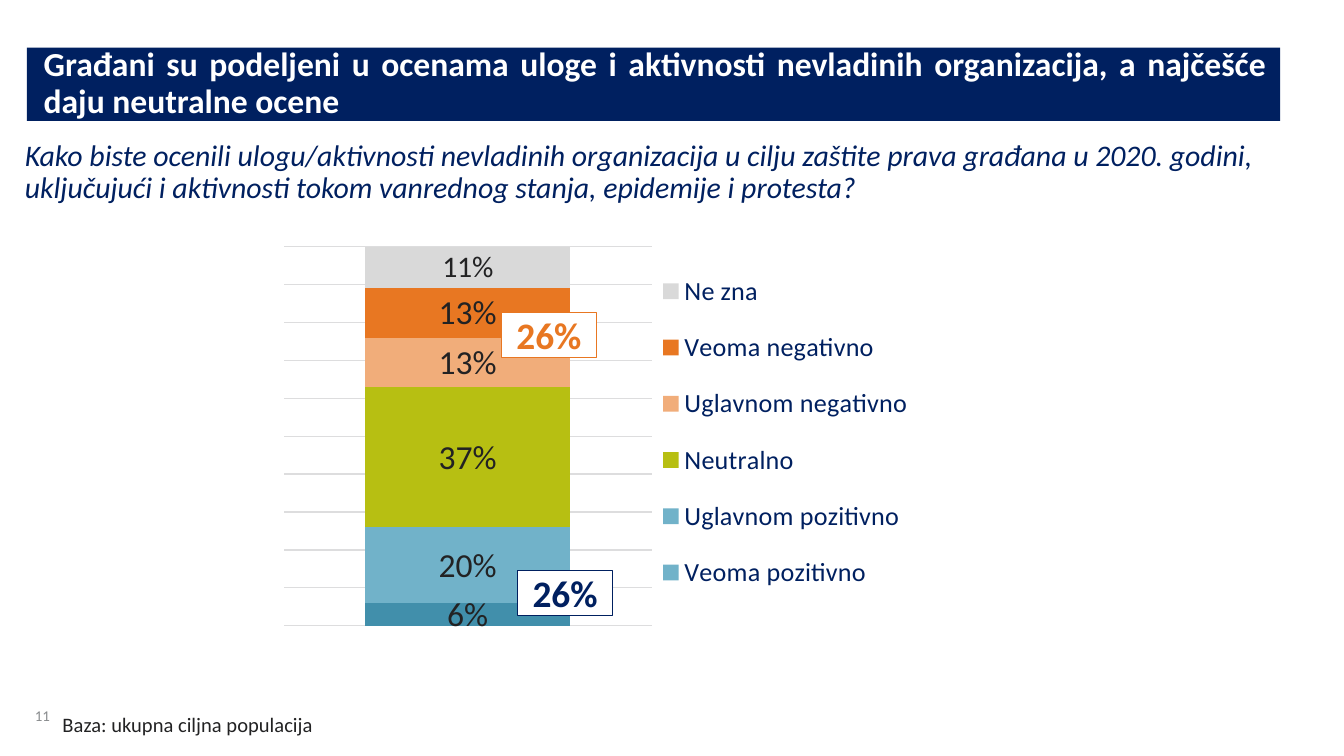
from lxml import etree
from pptx import Presentation
from pptx.chart.data import CategoryChartData
from pptx.dml.color import RGBColor
from pptx.enum.chart import XL_CHART_TYPE, XL_LABEL_POSITION, XL_LEGEND_POSITION
from pptx.enum.shapes import MSO_SHAPE
from pptx.enum.text import MSO_ANCHOR, PP_ALIGN
from pptx.oxml import parse_xml
from pptx.util import Pt

PX = 4572
FONT = "Calibri"
TITLE_ONLY = 5
STACKED = XL_CHART_TYPE.COLUMN_STACKED_100
LABEL_CENTER = XL_LABEL_POSITION.CENTER
LEGEND_RIGHT = XL_LEGEND_POSITION.RIGHT
RECTANGLE = MSO_SHAPE.RECTANGLE
TOP, MIDDLE, BOTTOM = MSO_ANCHOR.TOP, MSO_ANCHOR.MIDDLE, MSO_ANCHOR.BOTTOM
LEFT, CENTER, JUSTIFY = PP_ALIGN.LEFT, PP_ALIGN.CENTER, PP_ALIGN.JUSTIFY

NAVY = RGBColor(0x00, 0x20, 0x60)
WHITE = RGBColor(0xFF, 0xFF, 0xFF)
INK = RGBColor(0x22, 0x22, 0x23)
GRAY = RGBColor(0x88, 0x8B, 0x8D)
GRID = RGBColor(0xDD, 0xDD, 0xDE)
SILVER = RGBColor(0xD9, 0xD9, 0xD9)
ORANGE = RGBColor(0xE8, 0x77, 0x22)
PEACH = RGBColor(0xF1, 0xAD, 0x7A)
LIME = RGBColor(0xB7, 0xBF, 0x12)
SKY = RGBColor(0x71, 0xB2, 0xC9)
TEAL = RGBColor(0x41, 0x8F, 0xAB)

RATINGS = [
    ("Veoma pozitivno", 6, SKY, 18),
    ("Uglavnom pozitivno", 20, SKY, 18),
    ("Neutralno", 37, LIME, 18),
    ("Uglavnom negativno", 13, PEACH, 18),
    ("Veoma negativno", 13, ORANGE, 18),
    ("Ne zna", 11, SILVER, 16),
]
PLOT_LAYOUT = {"layoutTarget": "inner", "xMode": "edge", "yMode": "edge",
               "x": 0.03, "y": 0.04, "w": 0.51, "h": 0.86}
LEGEND_LAYOUT = {"xMode": "edge", "yMode": "edge",
                 "x": 0.54, "y": 0.05, "w": 0.37, "h": 0.82}
CHART_NS = "http://schemas.openxmlformats.org/drawingml/2006/chart"


def to_emu(*lengths):
    return [length * PX for length in lengths]


def set_font(font, size, color, bold=False, italic=False):
    font.name = FONT
    font.size = Pt(size)
    font.color.rgb = color
    font.bold = bold
    font.italic = italic


def write_text(shape, text, size, color, bold=False, italic=False, align=LEFT,
               anchor=TOP, margins=(0, 0, 0, 0), wrap=True, spacing=1.0):
    frame = shape.text_frame
    frame.text = text
    frame.word_wrap = wrap
    frame.vertical_anchor = anchor
    (frame.margin_left, frame.margin_top,
     frame.margin_right, frame.margin_bottom) = to_emu(*margins)
    para = frame.paragraphs[0]
    para.alignment = align
    para.line_spacing = spacing
    set_font(para.font, size, color, bold, italic)


def add_title(slide, bounds, text):
    title = slide.shapes.title
    title.left, title.top, title.width, title.height = to_emu(*bounds)
    title.fill.solid()
    title.fill.fore_color.rgb = NAVY
    write_text(title, text, 18, WHITE, bold=True, align=JUSTIFY,
               margins=(25, 0, 19, 0), spacing=0.9)


def add_text(slide, bounds, text, size, color, **style):
    box = slide.shapes.add_textbox(*to_emu(*bounds))
    write_text(box, text, size, color, **style)


def add_total(slide, left, top, text, color):
    box = slide.shapes.add_shape(RECTANGLE, *to_emu(left, top, 142, 67))
    box.shadow.inherit = False
    box.fill.solid()
    box.fill.fore_color.rgb = WHITE
    box.line.color.rgb = color
    box.line.width = Pt(0.75)
    write_text(box, text, 20, color, bold=True, align=CENTER, anchor=MIDDLE)


def set_layout(parent, index, settings):
    for layout in parent.findall(f"{{{CHART_NS}}}layout"):
        parent.remove(layout)
    layout = parse_xml(f'<c:layout xmlns:c="{CHART_NS}"><c:manualLayout/></c:layout>')
    for name, value in settings.items():
        etree.SubElement(layout[0], f"{{{CHART_NS}}}{name}", val=str(value))
    parent.insert(index, layout)


def style_series(series, color, label_size):
    series.format.fill.solid()
    series.format.fill.fore_color.rgb = color
    labels = series.data_labels
    labels.show_value = True
    labels.position = LABEL_CENTER
    labels.number_format = "0\\%"
    labels.number_format_is_linked = False
    set_font(labels.font, label_size, INK)


def style_legend(chart):
    chart.has_legend = True
    legend = chart.legend
    legend.position = LEGEND_RIGHT
    legend.include_in_layout = False
    set_font(legend.font, 14, NAVY)
    set_layout(legend._element, 1, LEGEND_LAYOUT)


def style_axes(chart):
    chart.category_axis.visible = False
    axis = chart.value_axis
    axis.visible = False
    axis.minimum_scale, axis.maximum_scale, axis.major_unit = 0, 1, 0.1
    axis.has_major_gridlines = True
    axis.major_gridlines.format.line.color.rgb = GRID
    axis.major_gridlines.format.line.width = Pt(0.75)


def add_rating_chart(slide, bounds):
    data = CategoryChartData()
    data.categories = ["1"]
    for name, value, _, _ in RATINGS:
        data.add_series(name, [value])
    chart = slide.shapes.add_chart(STACKED, *to_emu(*bounds), data).chart
    set_font(chart.font, 10, INK)
    chart.has_title = False
    style_legend(chart)
    style_axes(chart)

    plot = chart.plots[0]
    plot.gap_width = 80
    plot.overlap = 100
    plot.vary_by_categories = False
    for series, (_, _, color, label_size) in zip(plot.series, RATINGS):
        style_series(series, color, label_size)
    lowest = plot.series[0].points[0].format.fill
    lowest.solid()
    lowest.fore_color.rgb = TEAL
    set_layout(plot._element.getparent(), 0, PLOT_LAYOUT)


def main():
    deck = Presentation()
    deck.slide_width, deck.slide_height = to_emu(2000, 1125)
    slide = deck.slides.add_slide(deck.slide_layouts[TITLE_ONLY])

    add_title(slide, (40, 71, 1865, 109),
              "Građani su podeljeni u ocenama uloge i aktivnosti nevladinih "
              "organizacija, a najčešće daju neutralne ocene")
    add_text(slide, (23, 209, 1908, 104),
             "Kako biste ocenili ulogu/aktivnosti nevladinih organizacija u cilju "
             "zaštite prava građana u 2020. godini, uključujući i aktivnosti tokom "
             "vanrednog stanja, epidemije i protesta?",
             16, NAVY, italic=True, anchor=BOTTOM, margins=(14, 8, 14, 8), spacing=0.9)
    add_rating_chart(slide, (390, 341, 1074, 656))
    add_total(slide, 746, 465, "26%", ORANGE)
    add_total(slide, 770, 849, "26%", NAVY)
    add_text(slide, (52, 1026, 68, 52), "11", 8, GRAY,
             anchor=BOTTOM, wrap=False, spacing=0.85)
    add_text(slide, (93, 1060, 376, 38), "Baza: ukupna ciljna populacija", 11, INK,
             wrap=False)
    deck.save("out.pptx")


if __name__ == "__main__":
    main()
